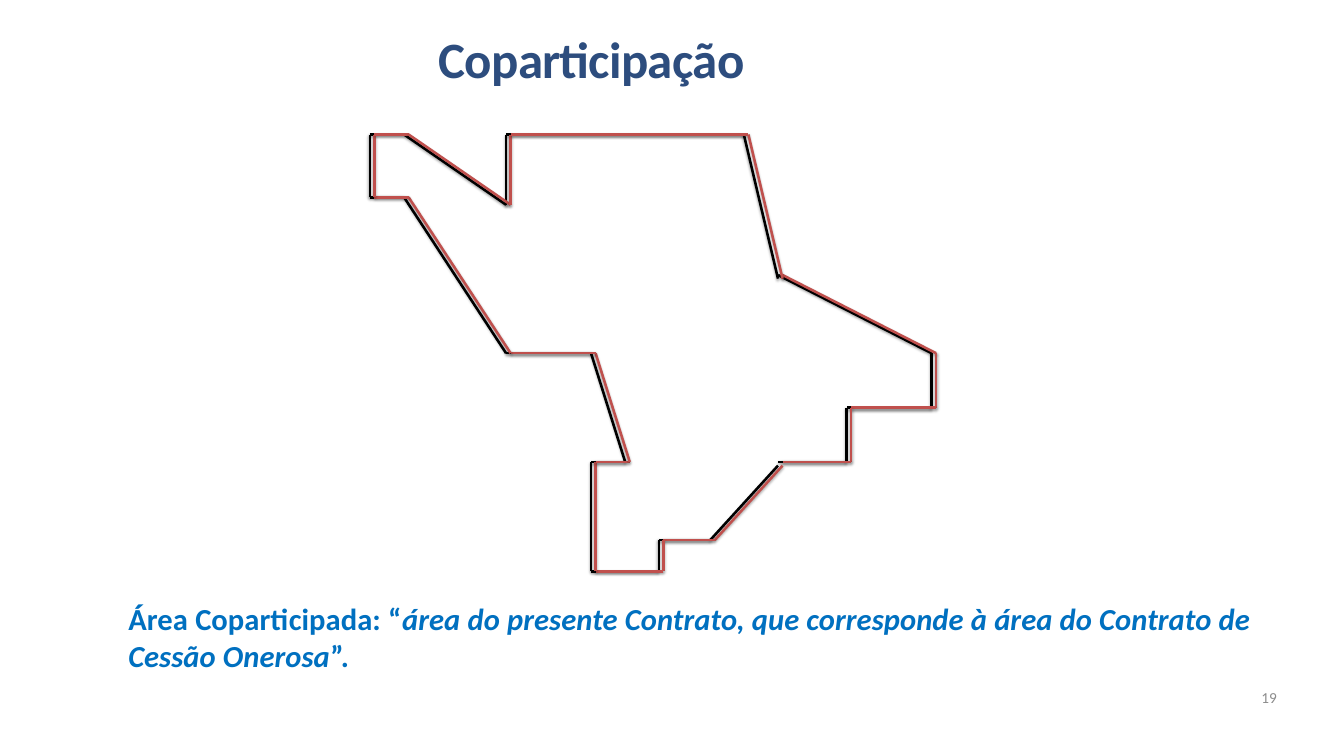
"""Builds the slide that compares the outlines of the shared contract area."""
from dataclasses import dataclass
from itertools import pairwise

from lxml import etree
from pptx import Presentation
from pptx.dml.color import RGBColor
from pptx.enum.shapes import MSO_CONNECTOR
from pptx.enum.text import MSO_ANCHOR, MSO_AUTO_SIZE, PP_ALIGN
from pptx.oxml import parse_xml
from pptx.oxml.ns import qn
from pptx.util import Cm, Pt

STRAIGHT = MSO_CONNECTOR.STRAIGHT
TOP = MSO_ANCHOR.TOP
NO_FIT = MSO_AUTO_SIZE.NONE
CENTER, JUSTIFY, RIGHT = PP_ALIGN.CENTER, PP_ALIGN.JUSTIFY, PP_ALIGN.RIGHT


@dataclass(frozen=True)
class Theme:
    """Keeps the font, colours and sizes of the slide."""
    font: str = "Calibri"
    title_color: str = "2D4D7E"
    body_color: str = "0070C0"
    number_color: str = "8C8C8C"
    contract_color: str = "000000"
    shared_color: str = "C0504D"
    title_size: int = 60
    body_size: int = 36
    number_size: int = 18
    line_width: int = 3


THEME = Theme()
SLIDE_SIZE = (55.85, 31.42)
TITLE = [("Coparticipação", False)]
DEFINITION = [
    ("Área Coparticipada: “", False),
    ("área do presente Contrato, que corresponde à área do Contrato de Cessão Onerosa", True),
    ("”.", False),
]
PAGE_NUMBER = [("19", False)]
TITLE_BOX = (4.78, 0.97, 39.57, 2.77)
DEFINITION_BOX = (3.58, 24.82, 48.69, 6.4)
NUMBER_BOX = (40.03, 28.6, 13.03, 0.76)

EAST_BORDER = [
    (32.33, 11.43), (38.71, 14.68), (38.71, 16.94), (35.18, 16.94),
    (35.18, 19.2), (32.33, 19.2),
]
WEST_BORDER = [
    (32.33, 19.35), (29.51, 22.45), (27.38, 22.45), (27.38, 23.75),
    (24.56, 23.75), (24.56, 19.2), (25.98, 19.2), (24.56, 14.68),
    (21.03, 14.68), (16.79, 8.2), (15.37, 8.2), (15.37, 5.59),
    (16.79, 5.59), (21.03, 8.51), (21.03, 5.59), (30.91, 5.59),
    (32.33, 11.58),
]
OUTLINES = [(THEME.contract_color, 0), (THEME.shared_color, 0.19)]

SHADOW = (
    '<a:effectLst xmlns:a="http://schemas.openxmlformats.org/drawingml/2006/main">'
    '<a:outerShdw blurRad="40000" dist="23000" dir="5400000" rotWithShape="0">'
    '<a:srgbClr val="000000"><a:alpha val="35000"/></a:srgbClr>'
    '</a:outerShdw></a:effectLst>'
)


def write_text(box, runs, *, size, color, align, bold=False, spacing=0,
               insets=(0, 0, 0, 0), indent=0, before=0, line_spacing=1.0):
    """Fills a box with one formatted paragraph."""
    frame = box.text_frame
    frame.word_wrap = True
    frame.auto_size = NO_FIT
    frame.vertical_anchor = TOP
    (frame.margin_left, frame.margin_top,
     frame.margin_right, frame.margin_bottom) = map(Cm, insets)
    para = frame.paragraphs[0]
    para.alignment = align
    para.line_spacing = line_spacing
    para.space_before = Pt(before)
    properties = para._p.get_or_add_pPr()
    properties.set("marL", str(Cm(indent)))
    properties.set("indent", "0")
    etree.SubElement(properties, qn("a:buNone"))
    for text, italic in runs:
        span = para.add_run()
        span.text = text
        font = span.font
        font.name = THEME.font
        font.size = Pt(size)
        font.bold = bold
        font.italic = italic
        font.color.rgb = RGBColor.from_string(color)
        span._r.get_or_add_rPr().set("spc", str(spacing))


def place(box, bounds):
    """Moves a box to its bounds in centimetres."""
    box.left, box.top, box.width, box.height = map(Cm, bounds)
    return box


def draw_outline(page, color, shift):
    """Draws both borders of the area as one group of lines."""
    group = page.shapes.add_group_shape()
    for border in (EAST_BORDER, WEST_BORDER):
        for (x1, y1), (x2, y2) in pairwise(border):
            line = group.shapes.add_connector(
                STRAIGHT, Cm(x1 + shift), Cm(y1), Cm(x2 + shift), Cm(y2))
            line.line.color.rgb = RGBColor.from_string(color)
            line.line.width = Pt(THEME.line_width)
            line._element.spPr.append(parse_xml(SHADOW))


def main():
    """Assembles and saves the deck."""
    deck = Presentation()
    deck.slide_width, deck.slide_height = map(Cm, SLIDE_SIZE)
    page = deck.slides.add_slide(deck.slide_layouts[1])
    for color, shift in OUTLINES:
        draw_outline(page, color, shift)
    write_text(place(page.shapes.title, TITLE_BOX), TITLE,
               size=THEME.title_size, color=THEME.title_color, align=CENTER,
               bold=True, spacing=-80, insets=(0, 0.79, 0, 0), indent=0.03,
               before=22.4, line_spacing=0.73)
    write_text(place(page.placeholders[1], DEFINITION_BOX), DEFINITION,
               size=THEME.body_size, color=THEME.body_color, align=JUSTIFY,
               bold=True, spacing=10, insets=(0.25, 0.13, 0.25, 0.13), indent=1.5)
    write_text(page.shapes.add_textbox(*map(Cm, NUMBER_BOX)), PAGE_NUMBER,
               size=THEME.number_size, color=THEME.number_color, align=RIGHT)
    deck.save("out.pptx")


if __name__ == "__main__":
    main()
